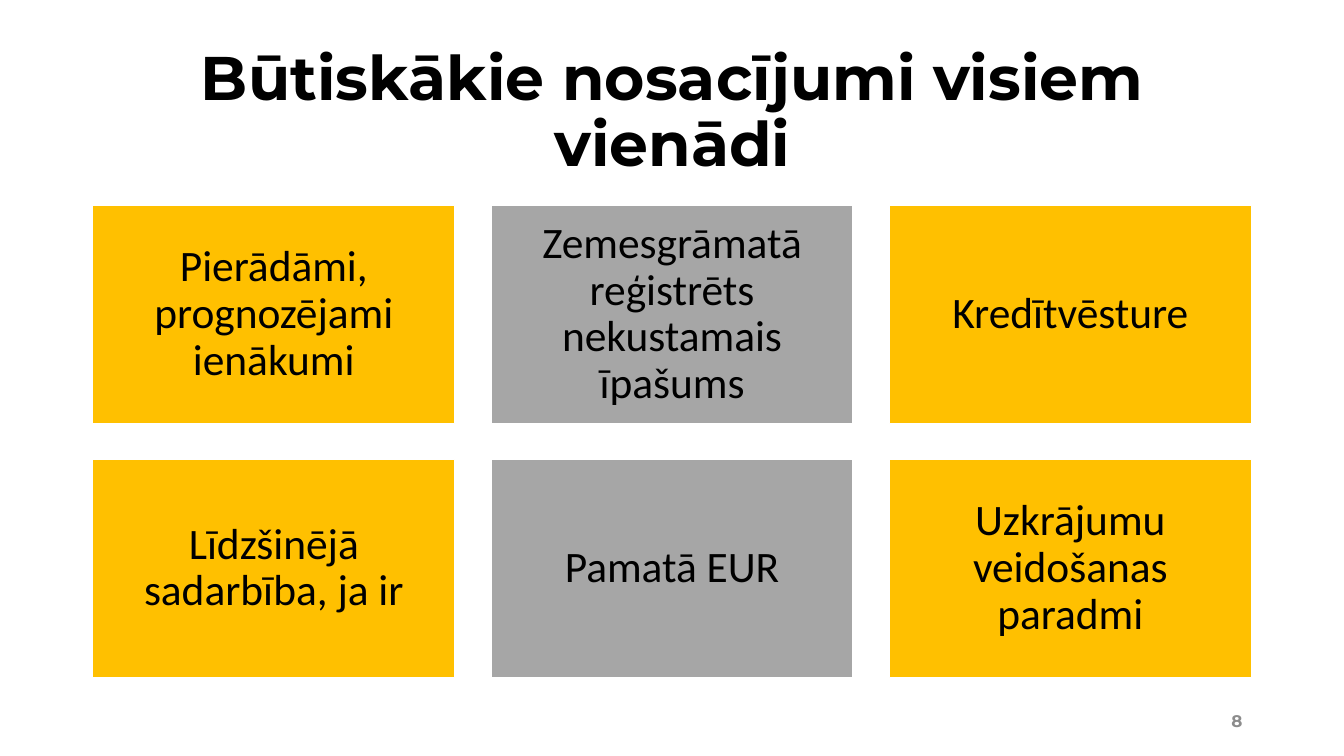
from dataclasses import dataclass

from pptx import Presentation
from pptx.dml.color import RGBColor
from pptx.enum.shapes import MSO_SHAPE
from pptx.enum.text import MSO_ANCHOR, PP_ALIGN
from pptx.shapes.autoshape import Shape
from pptx.slide import Slide
from pptx.util import Inches, Pt

RECTANGLE = MSO_SHAPE.RECTANGLE
MIDDLE = MSO_ANCHOR.MIDDLE
CENTER = PP_ALIGN.CENTER
RIGHT = PP_ALIGN.RIGHT

COLORS = {
    "black": "000000",
    "white": "FFFFFF",
    "gold": "FFC000",
    "gray": "A6A6A6",
    "number": "8C8C8C",
}

COLUMNS = 3
GRID_LEFT, GRID_TOP = 0.92, 2.04
CARD_WIDTH, CARD_HEIGHT = 3.59, 2.16
GAP = 0.36
CARD_INSET = 0.13


@dataclass(frozen=True)
class TextStyle:
    font: str
    size: float
    color: str
    bold: bool = False
    align: PP_ALIGN = CENTER
    line_spacing: float = 0.9


@dataclass(frozen=True)
class Label:
    text: str
    left: float
    top: float
    width: float
    height: float
    style: TextStyle


@dataclass(frozen=True)
class Card:
    text: str
    fill: str


TITLE_STYLE = TextStyle("Montserrat", 44, "black", bold=True)
NUMBER_STYLE = TextStyle("Montserrat", 12, "number", bold=True, align=RIGHT, line_spacing=1.0)
CARD_STYLE = TextStyle("Calibri", 31, "black")

LABELS = [
    Label("Būtiskākie nosacījumi visiem vienādi", 0.92, 0.4, 11.5, 1.45, TITLE_STYLE),
    Label("8", 9.42, 6.95, 3, 0.4, NUMBER_STYLE),
]

CARDS = [
    Card("Pierādāmi, prognozējami ienākumi", "gold"),
    Card("Zemesgrāmatā reģistrēts nekustamais īpašums", "gray"),
    Card("Kredītvēsture", "gold"),
    Card("Līdzšinējā sadarbība, ja ir", "gold"),
    Card("Pamatā EUR", "gray"),
    Card("Uzkrājumu veidošanas paradmi", "gold"),
]


def color(name: str) -> RGBColor:
    return RGBColor.from_string(COLORS[name])


def write_text(box: Shape, text: str, style: TextStyle) -> None:
    frame = box.text_frame
    frame.word_wrap = True
    frame.vertical_anchor = MIDDLE
    para = frame.paragraphs[0]
    para.alignment = style.align
    para.line_spacing = style.line_spacing
    span = para.add_run()
    span.text = text
    span.font.name = style.font
    span.font.size = Pt(style.size)
    span.font.bold = style.bold
    span.font.color.rgb = color(style.color)


def draw_label(page: Slide, label: Label) -> None:
    box = page.shapes.add_textbox(
        Inches(label.left), Inches(label.top), Inches(label.width), Inches(label.height)
    )
    write_text(box, label.text, label.style)


def draw_card(page: Slide, card: Card, index: int) -> None:
    row, column = divmod(index, COLUMNS)
    box = page.shapes.add_shape(
        RECTANGLE,
        Inches(GRID_LEFT + column * (CARD_WIDTH + GAP)),
        Inches(GRID_TOP + row * (CARD_HEIGHT + GAP)),
        Inches(CARD_WIDTH),
        Inches(CARD_HEIGHT),
    )
    box.shadow.inherit = False
    box.fill.solid()
    box.fill.fore_color.rgb = color(card.fill)
    box.line.color.rgb = color("white")
    box.line.width = Pt(1)
    frame = box.text_frame
    frame.margin_left = frame.margin_right = Inches(CARD_INSET)
    frame.margin_top = frame.margin_bottom = Inches(CARD_INSET)
    write_text(box, card.text, CARD_STYLE)


def main() -> None:
    deck = Presentation()
    deck.slide_width = Inches(13.33)
    deck.slide_height = Inches(7.5)
    page = deck.slides.add_slide(deck.slide_layouts[6])
    for label in LABELS:
        draw_label(page, label)
    for index, card in enumerate(CARDS):
        draw_card(page, card, index)
    deck.save("out.pptx")


if __name__ == "__main__":
    main()
